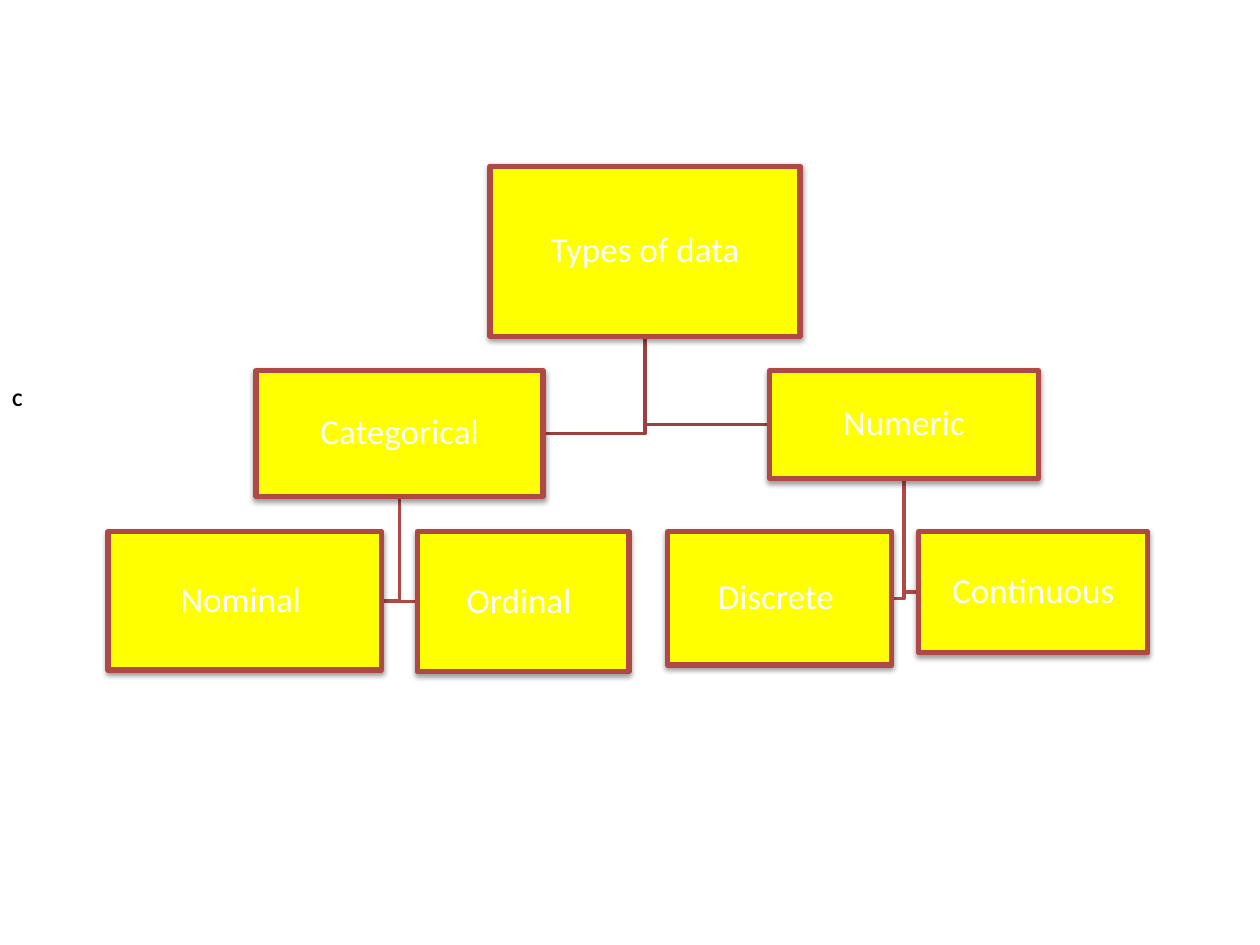
from dataclasses import dataclass

from lxml.etree import SubElement
from pptx import Presentation
from pptx.dml.color import RGBColor
from pptx.enum.shapes import MSO_SHAPE
from pptx.enum.text import MSO_ANCHOR, PP_ALIGN
from pptx.oxml.ns import qn
from pptx.slide import Slide
from pptx.util import Cm, Pt

COLORS = {
    "box": "FFFF00",
    "border": "AE4946",
    "top_branch": "9A403E",
    "label": "FFFFFF",
    "text": "000000",
    "shadow": "000000",
}

# Name: (label, parent, left, top, width, height), lengths in cm
NODES = {
    "types": ("Types of data", None, 9.88, 3.35, 6.25, 3.43),
    "categorical": ("Categorical", "types", 5.16, 7.47, 5.79, 2.54),
    "nominal": ("Nominal ", "categorical", 2.18, 10.72, 5.51, 2.79),
    "ordinal": ("Ordinal ", "categorical", 8.41, 10.72, 4.27, 2.82),
    "numeric": ("Numeric", "types", 15.52, 7.47, 5.41, 2.18),
    "discrete": ("Discrete ", "numeric", 13.46, 10.72, 4.52, 2.69),
    "continuous": ("Continuous", "numeric", 18.52, 10.72, 4.62, 2.44),
}


@dataclass
class TreeSlide:
    slide: Slide
    font: str = "Calibri"
    label_size: int = 20
    note_size: int = 11

    def color(self, name):
        return RGBColor.from_string(COLORS[name])

    def format_text(self, paragraph, size, color, bold=False):
        for run in paragraph.runs:
            run.font.name = self.font
            run.font.size = Pt(size)
            run.font.bold = bold
            run.font.color.rgb = self.color(color)

    def add_shadow(self, shape):
        shape.shadow.inherit = False
        effects = shape.element.spPr.find(qn("a:effectLst"))
        shadow = SubElement(
            effects, qn("a:outerShdw"), blurRad=str(Pt(3.1)), dist=str(Pt(1.6)),
            dir="5400000", rotWithShape="0",
        )
        color = SubElement(shadow, qn("a:srgbClr"), val=COLORS["shadow"])
        SubElement(color, qn("a:alpha"), val="38000")

    def add_box(self, label, left, top, width, height):
        shape = self.slide.shapes.add_shape(
            MSO_SHAPE.RECTANGLE, Cm(left), Cm(top), Cm(width), Cm(height)
        )
        shape.fill.solid()
        shape.fill.fore_color.rgb = self.color("box")
        shape.line.color.rgb = self.color("border")
        shape.line.width = Pt(3)
        self.add_shadow(shape)
        frame = shape.text_frame
        frame.text = label
        frame.word_wrap = True
        frame.vertical_anchor = MSO_ANCHOR.MIDDLE
        frame.margin_left = frame.margin_right = Cm(0.03)
        frame.margin_top = frame.margin_bottom = Cm(0.03)
        paragraph = frame.paragraphs[0]
        paragraph.alignment = PP_ALIGN.CENTER
        paragraph.line_spacing = 0.9
        self.format_text(paragraph, self.label_size, "label")

    def add_branch(self, parent, child, color):
        """Go down from the parent's centre, then across to the child's near side."""
        parent_left, parent_top, parent_width, parent_height = parent
        left, top, width, height = child
        x = parent_left + parent_width / 2
        near_side = left if left > x else left + width
        middle = top + height / 2
        builder = self.slide.shapes.build_freeform(
            Cm(x), Cm(parent_top + parent_height)
        )
        builder.add_line_segments(
            [(Cm(x), Cm(middle)), (Cm(near_side), Cm(middle))], close=False
        )
        shape = builder.convert_to_shape()
        shape.fill.background()
        shape.line.color.rgb = self.color(color)
        shape.line.width = Pt(2)
        shape.shadow.inherit = False

    def add_note(self, text, left, top, width, height):
        frame = self.slide.shapes.add_textbox(
            Cm(left), Cm(top), Cm(width), Cm(height)
        ).text_frame
        frame.text = text
        frame.word_wrap = True
        frame.vertical_anchor = MSO_ANCHOR.BOTTOM
        self.format_text(frame.paragraphs[0], self.note_size, "text", bold=True)


def main():
    presentation = Presentation()
    presentation.slide_width = Cm(25.4)
    presentation.slide_height = Cm(19.05)
    tree = TreeSlide(presentation.slides.add_slide(presentation.slide_layouts[6]))

    # Branches, behind the boxes
    for label, parent, *box in NODES.values():
        if parent:
            color = "top_branch" if parent == "types" else "border"
            tree.add_branch(NODES[parent][2:], box, color)

    # Boxes
    for label, parent, *box in NODES.values():
        tree.add_box(label, *box)

    # Letter at the left edge
    tree.add_note("C", 0, 7.21, 25.4, 1.19)

    presentation.save("out.pptx")


if __name__ == "__main__":
    main()
